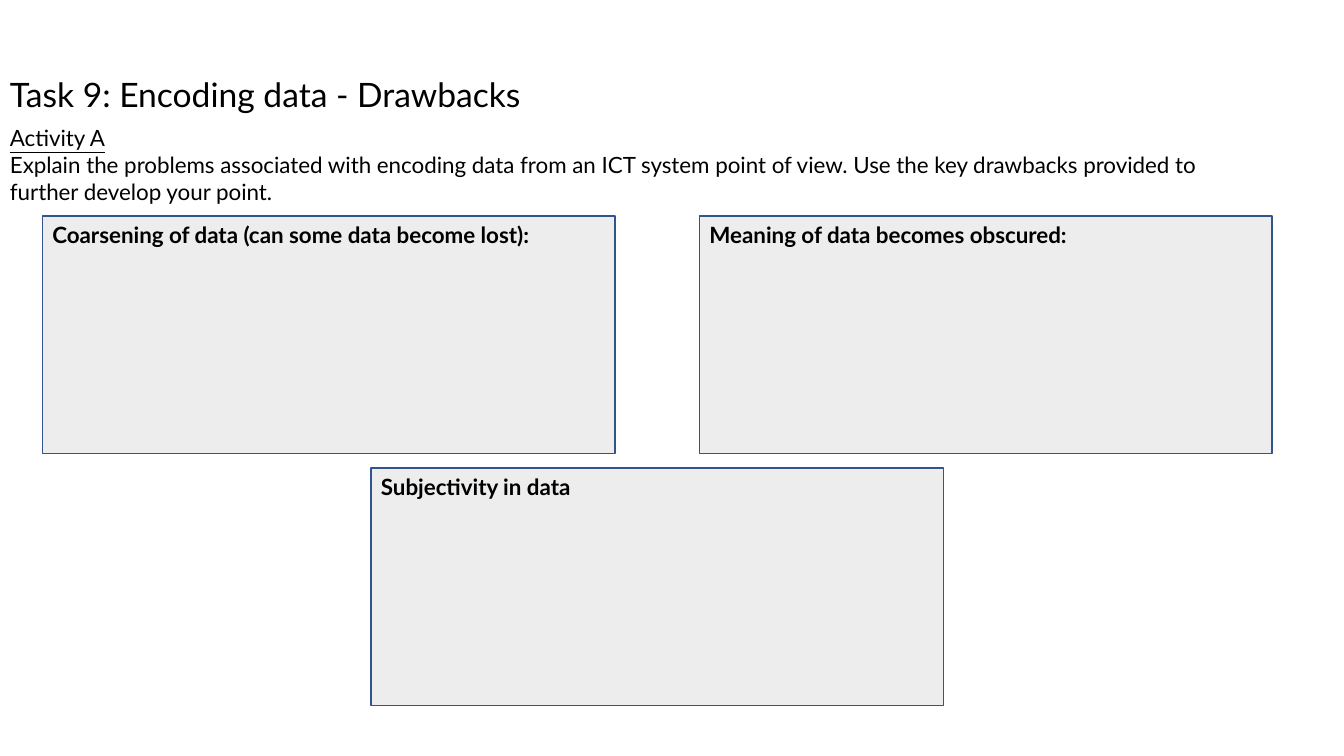
from pptx import Presentation
from pptx.dml.color import RGBColor
from pptx.enum.shapes import MSO_SHAPE
from pptx.enum.text import MSO_ANCHOR, PP_ALIGN
from pptx.util import Cm, Pt

TITLE = "Task 9: Encoding data - Drawbacks"
TASK = "Activity A"
BRIEF = (
    "Explain the problems associated with encoding data from an ICT system "
    "point of view. Use the key drawbacks provided to further develop your point."
)
CARDS = [
    ("Coarsening of data (can some data become lost):", 0, 0),
    ("Meaning of data becomes obscured:", 2, 0),
    ("Subjectivity in data", 1, 1),
]

FONT = "Lato"
BLACK = RGBColor(0x00, 0x00, 0x00)
GREY = RGBColor(0xED, 0xED, 0xED)
BLUE = RGBColor(0x31, 0x53, 0x8F)

LEFT, TOP = 1.07, 5.44
WIDE, HIGH = 14.43, 5.99
STEP_X, STEP_Y = 8.28, 6.35


def write(para, text, size=16, bold=False, under=False):
    para.alignment = PP_ALIGN.LEFT
    run = para.add_run()
    run.text = text
    font = run.font
    font.name = FONT
    font.size = Pt(size)
    font.bold = bold
    font.underline = under
    font.color.rgb = BLACK


def add_text(slide, x, y, w, h):
    frame = slide.shapes.add_textbox(Cm(x), Cm(y), Cm(w), Cm(h)).text_frame
    frame.word_wrap = True
    return frame


def add_card(slide, text, col, row):
    card = slide.shapes.add_shape(
        MSO_SHAPE.RECTANGLE,
        Cm(LEFT + col * STEP_X), Cm(TOP + row * STEP_Y), Cm(WIDE), Cm(HIGH),
    )
    card.shadow.inherit = False
    card.fill.solid()
    card.fill.fore_color.rgb = GREY
    card.line.color.rgb = BLUE
    card.line.width = Pt(1)
    frame = card.text_frame
    frame.word_wrap = True
    frame.vertical_anchor = MSO_ANCHOR.TOP
    write(frame.paragraphs[0], text, bold=True)


def main():
    deck = Presentation()
    deck.slide_width, deck.slide_height = Cm(33.87), Cm(19.05)
    slide = deck.slides.add_slide(deck.slide_layouts[6])

    head = add_text(slide, 0, 1.75, 21.72, 1.27)
    write(head.paragraphs[0], TITLE, size=24)

    body = add_text(slide, 0, 3, 30.99, 2.31)
    write(body.paragraphs[0], TASK, under=True)
    write(body.add_paragraph(), BRIEF)

    for text, col, row in CARDS:
        add_card(slide, text, col, row)

    deck.save("out.pptx")


if __name__ == "__main__":
    main()
